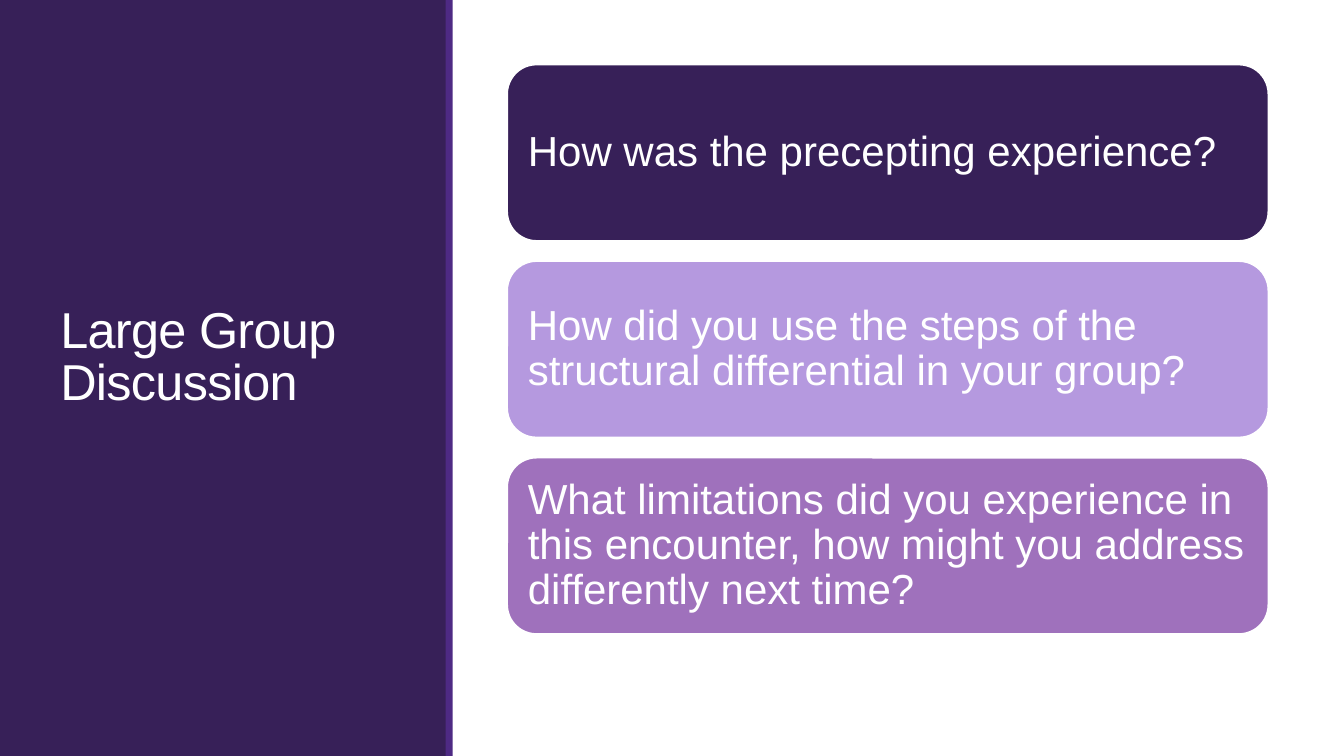
"""Build the large group discussion slide."""
from dataclasses import dataclass

from pptx import Presentation
from pptx import util as u
from pptx.dml.color import RGBColor
from pptx.enum import shapes, text
from pptx.shapes.autoshape import Shape
from pptx.slide import Slide
from pptx.text.text import TextFrame

PX = 9144


@dataclass(frozen=True)
class Theme:
    font: str = "Arial"
    title_size: int = 36
    question_size: int = 30
    dark: str = "372058"
    accent: str = "4E2A84"
    lilac: str = "B599DF"
    orchid: str = "9F71BC"
    white: str = "FFFFFF"


@dataclass(frozen=True)
class Box:
    left: int
    top: int
    width: int
    height: int

    def emu(self) -> tuple[int, int, int, int]:
        return self.left * PX, self.top * PX, self.width * PX, self.height * PX


@dataclass(frozen=True)
class Question:
    wording: str
    fill: str


THEME = Theme()
SIDE_PANEL = Box(0, 0, 443, 750)
PANEL_EDGE = Box(442, 0, 7, 750)
TITLE = Box(50, 65, 350, 347)
FIRST_CARD = Box(503, 64, 755, 175)
CARD_PITCH = 195
CARD_INSET = 12
QUESTIONS = (
    Question("How was the precepting experience?", THEME.dark),
    Question("How did you use the steps of the structural differential in your group?", THEME.lilac),
    Question(
        "What limitations did you experience in this encounter, "
        "how might you address differently next time?",
        THEME.orchid,
    ),
)


def add_block(slide: Slide, kind: shapes.MSO_SHAPE, box: Box, fill: str) -> Shape:
    block = slide.shapes.add_shape(kind, *box.emu())
    block.shadow.inherit = False
    block.fill.solid()
    block.fill.fore_color.rgb = RGBColor.from_string(fill)
    block.line.fill.background()
    return block


def write(frame: TextFrame, wording: str, size: int, spacing: float, anchor: text.MSO_ANCHOR) -> None:
    frame.word_wrap = True
    frame.vertical_anchor = anchor
    frame.text = wording
    paragraph = frame.paragraphs[0]
    paragraph.alignment = text.PP_ALIGN.LEFT
    paragraph.line_spacing = spacing
    font = paragraph.runs[0].font
    font.name = THEME.font
    font.size = u.Pt(size)
    font.color.rgb = RGBColor.from_string(THEME.white)


def add_title(slide: Slide) -> None:
    title = slide.shapes.add_textbox(*TITLE.emu()).text_frame
    write(title, "Large Group Discussion", THEME.title_size, 0.85, text.MSO_ANCHOR.BOTTOM)
    title.paragraphs[0].runs[0]._r.get_or_add_rPr().set("spc", "-50")


def add_card(slide: Slide, index: int, question: Question) -> None:
    top = FIRST_CARD.top + index * CARD_PITCH
    box = Box(FIRST_CARD.left, top, FIRST_CARD.width, FIRST_CARD.height)
    card = add_block(slide, shapes.MSO_SHAPE.ROUNDED_RECTANGLE, box, question.fill)
    card.line.color.rgb = RGBColor.from_string(THEME.white)
    card.line.width = u.Pt(1.25)
    frame = card.text_frame
    frame.margin_left = frame.margin_right = CARD_INSET * PX
    frame.margin_top = frame.margin_bottom = CARD_INSET * PX
    write(frame, question.wording, THEME.question_size, 0.9, text.MSO_ANCHOR.MIDDLE)


def main() -> None:
    deck = Presentation()
    deck.slide_width, deck.slide_height = 1333 * PX, 750 * PX
    slide = deck.slides.add_slide(deck.slide_layouts[6])
    add_block(slide, shapes.MSO_SHAPE.RECTANGLE, SIDE_PANEL, THEME.dark)
    add_block(slide, shapes.MSO_SHAPE.RECTANGLE, PANEL_EDGE, THEME.accent)
    add_title(slide)
    for index, question in enumerate(QUESTIONS):
        add_card(slide, index, question)
    deck.save("out.pptx")


if __name__ == "__main__":
    main()
